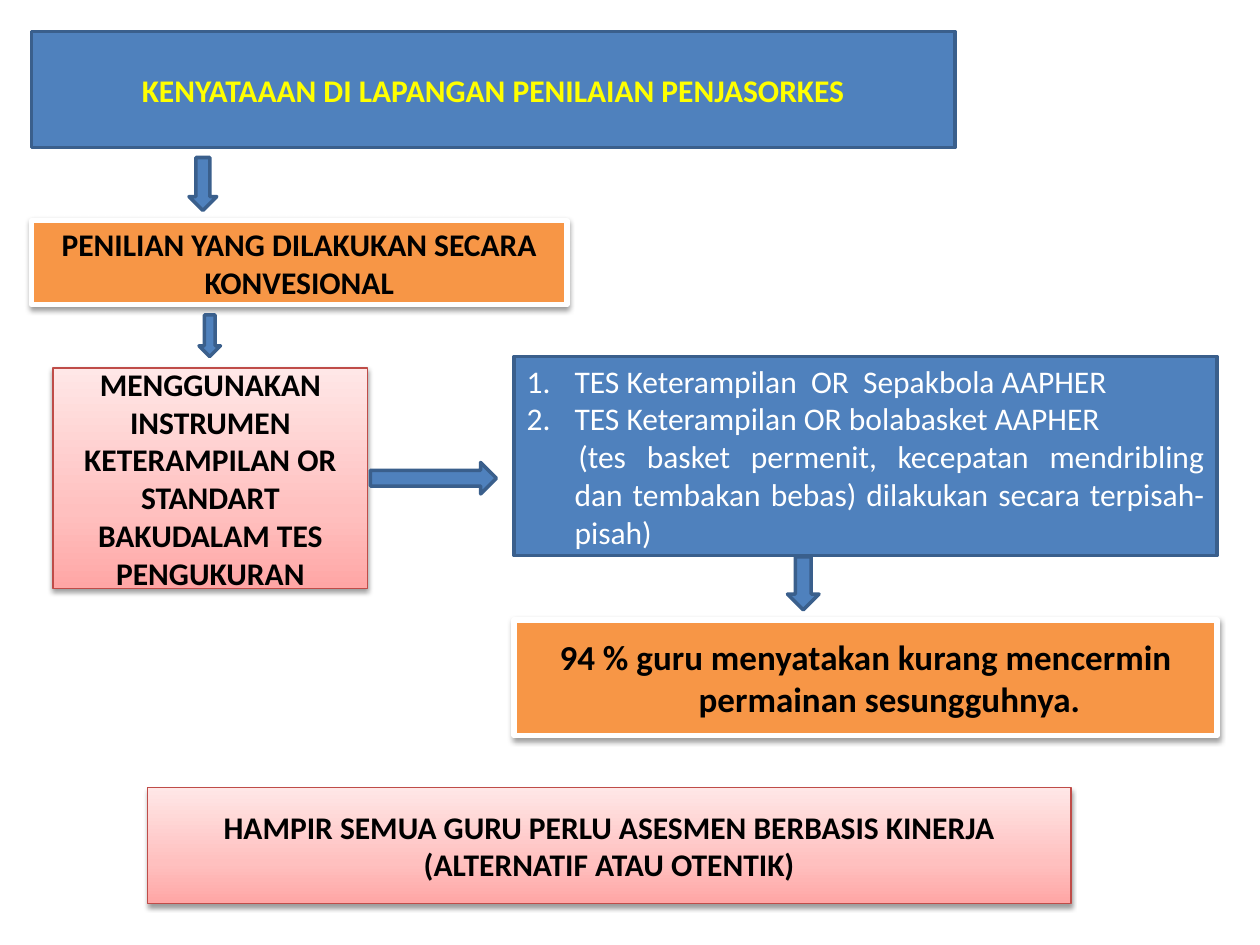
from lxml import etree
from pptx import Presentation
from pptx.dml.color import RGBColor
from pptx.enum.shapes import MSO_SHAPE
from pptx.enum.text import MSO_ANCHOR, MSO_AUTO_SIZE, PP_ALIGN
from pptx.oxml.ns import qn
from pptx.util import Inches, Pt

RECT, DOWN, RIGHT = MSO_SHAPE.RECTANGLE, MSO_SHAPE.DOWN_ARROW, MSO_SHAPE.RIGHT_ARROW
CENTER, JUSTIFY = PP_ALIGN.CENTER, PP_ALIGN.JUSTIFY
A_NS = "http://schemas.openxmlformats.org/drawingml/2006/main"

COLORS = {
    "blue": "4F81BD", "blue_edge": "3A5F8C", "orange": "F79646", "red_edge": "BF4C48",
    "white": "FFFFFF", "black": "000000", "yellow": "FFFF00",
}
PINK_STOPS = [(0, "FFA6A5"), (35, "FFC0BF"), (100, "FFE7E7")]

# Look of each kind of box: fill (None is the pink gradient), edge, edge width, shadow
STYLES = {
    "blue": ("blue", "blue_edge", 2, False),
    "orange": ("orange", "white", 3, True),
    "pink": (None, "red_edge", 0.75, True),
}

# Content: places are left, top, width, height in inches
HEADING = "KENYATAAAN DI LAPANGAN PENILAIAN PENJASORKES"
HEADING_AT = (0.25, 0.25, 7.33, 0.92)
TESTS = [
    "TES Keterampilan  OR  Sepakbola AAPHER",
    "TES Keterampilan OR bolabasket AAPHER",
]
TESTS_NOTE = ("(tes basket permenit, kecepatan mendribling dan tembakan bebas) "
              "dilakukan secara terpisah-pisah)")
TESTS_AT = (4.08, 2.83, 5.58, 1.58)
BOXES = [
    ("orange", (0.25, 1.75, 4.25, 0.67),
     "PENILIAN YANG DILAKUKAN SECARA KONVESIONAL", {}),
    ("pink", (0.42, 2.92, 2.5, 1.75),
     "MENGGUNAKAN INSTRUMEN KETERAMPILAN OR STANDART BAKUDALAM TES PENGUKURAN", {}),
    ("orange", (4.08, 4.92, 5.58, 0.92),
     "94 % guru menyatakan kurang mencermin permainan sesungguhnya.",
     {"size": 20, "margin": 0.38, "indent": -0.38}),
    ("pink", (1.17, 6.25, 7.33, 0.92),
     "HAMPIR SEMUA GURU PERLU ASESMEN BERBASIS KINERJA (ALTERNATIF ATAU OTENTIK)", {}),
]
ARROWS = [
    (DOWN, (1.5, 1.25, 0.22, 0.42)),
    (DOWN, (1.58, 2.5, 0.17, 0.33)),
    (RIGHT, (2.94, 3.67, 1, 0.25)),
    (DOWN, (6.25, 4.42, 0.25, 0.42)),
]


def rgb(name):
    return RGBColor.from_string(COLORS[name])


def add_element(parent, tag, **attributes):
    return etree.SubElement(parent, qn(tag), attributes)


def place(shape, at):
    shape.left, shape.top, shape.width, shape.height = map(Inches, at)


def apply_gradient(shape):
    gradient = etree.Element(qn("a:gradFill"), nsmap={"a": A_NS})
    stops = add_element(gradient, "a:gsLst")
    for position, color in PINK_STOPS:
        stop = add_element(stops, "a:gs", pos=str(position * 1000))
        add_element(stop, "a:srgbClr", val=color)
    add_element(gradient, "a:lin", ang=str(270 * 60000), scaled="0")
    shape._element.spPr.find(qn("a:prstGeom")).addnext(gradient)


def apply_style(shape, style):
    fill, edge, width, has_shadow = STYLES[style]
    if fill:
        shape.fill.solid()
        shape.fill.fore_color.rgb = rgb(fill)
    else:
        apply_gradient(shape)
    shape.line.color.rgb = rgb(edge)
    shape.line.width = Pt(width)
    shape.shadow.inherit = False
    if has_shadow:
        effects = shape._element.spPr.find(qn("a:effectLst"))
        shadow = add_element(effects, "a:outerShdw", blurRad=str(Pt(3.1)), dist=str(Pt(1.6)),
                             dir=str(90 * 60000), rotWithShape="0")
        color = add_element(shadow, "a:srgbClr", val=COLORS["black"])
        add_element(color, "a:alpha", val="38000")


def prepare_frame(shape):
    frame = shape.text_frame
    frame.word_wrap = True
    frame.auto_size = MSO_AUTO_SIZE.NONE
    frame.vertical_anchor = MSO_ANCHOR.MIDDLE
    return frame


def write(paragraph, text, size=18, color="black", bold=True, align=CENTER,
          margin=0, indent=0, numbered=False):
    paragraph.alignment = align
    paragraph.space_before = Pt(0)
    run = paragraph.add_run()
    run.text = text
    run.font.name = "Calibri"
    run.font.size = Pt(size)
    run.font.bold = bold
    run.font.color.rgb = rgb(color)
    properties = paragraph._p.get_or_add_pPr()
    properties.set("marL", str(Inches(margin)))
    properties.set("indent", str(Inches(indent)))
    if numbered:
        add_element(properties, "a:buFont", typeface="+mj-lt")
        add_element(properties, "a:buAutoNum", type="arabicPeriod")
    else:
        add_element(properties, "a:buNone")


def main():
    presentation = Presentation()
    presentation.slide_width, presentation.slide_height = Inches(10), Inches(7.5)
    slide = presentation.slides.add_slide(presentation.slide_layouts[1])
    heading, tests = slide.placeholders

    # Heading and list of tests
    for panel, at in ((heading, HEADING_AT), (tests, TESTS_AT)):
        place(panel, at)
        apply_style(panel, "blue")
    write(prepare_frame(heading).paragraphs[0], HEADING, color="yellow")

    tests_frame = prepare_frame(tests)
    list_format = {"color": "white", "bold": False, "align": JUSTIFY, "margin": 0.38}
    for index, test in enumerate(TESTS):
        paragraph = tests_frame.add_paragraph() if index else tests_frame.paragraphs[0]
        write(paragraph, test, indent=-0.38, numbered=True, **list_format)
    write(tests_frame.add_paragraph(), TESTS_NOTE, indent=0.03, **list_format)

    # Steps and conclusion
    for style, at, text, text_format in BOXES:
        box = slide.shapes.add_shape(RECT, *map(Inches, at))
        apply_style(box, style)
        write(prepare_frame(box).paragraphs[0], text, **text_format)

    # Block arrows between the steps
    for direction, at in ARROWS:
        apply_style(slide.shapes.add_shape(direction, *map(Inches, at)), "blue")

    presentation.save("out.pptx")


if __name__ == "__main__":
    main()
